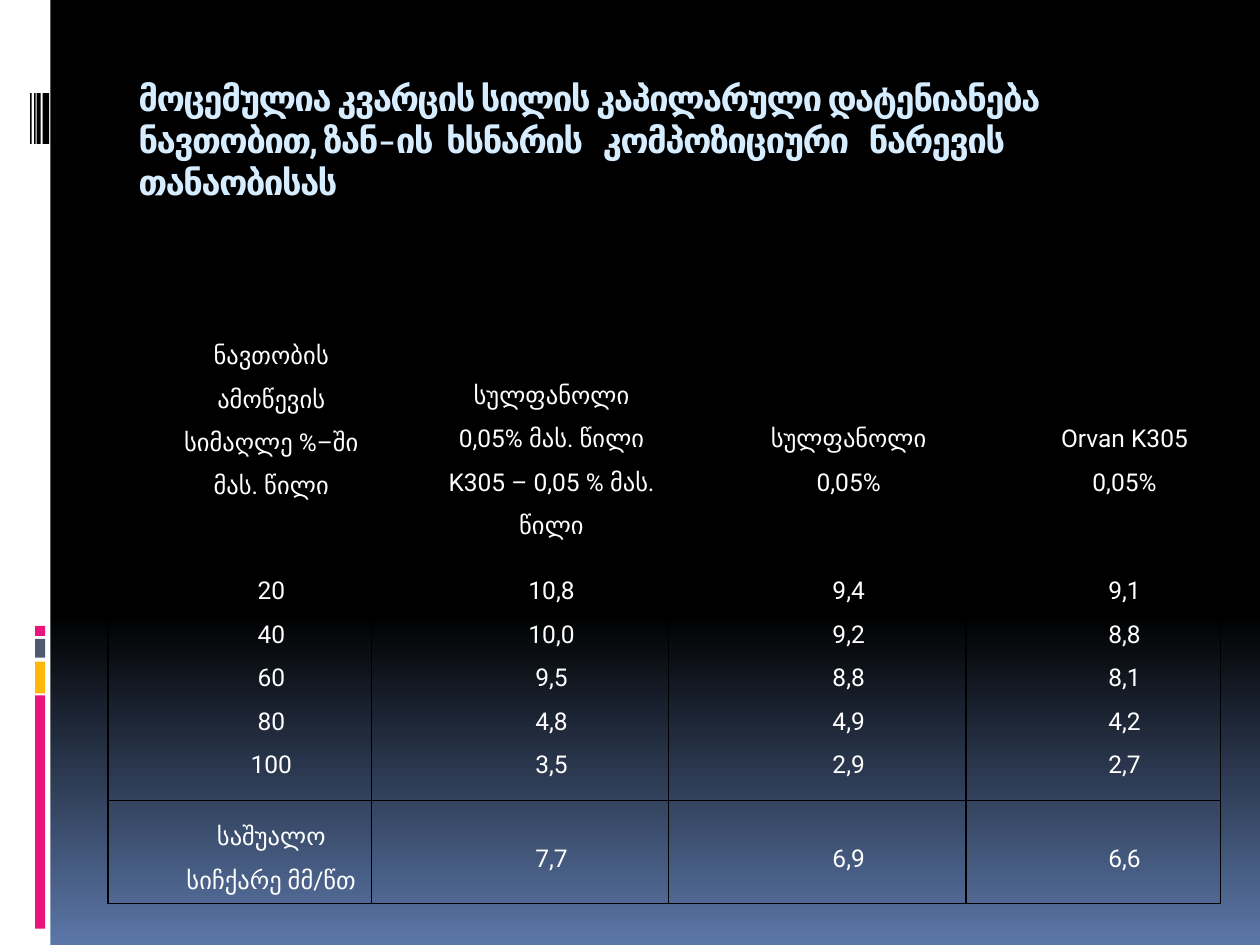
from pptx import Presentation
from pptx.dml.color import RGBColor
from pptx.enum.shapes import MSO_SHAPE as Shape
from pptx.enum.text import MSO_ANCHOR as Anchor, PP_ALIGN as Align
from pptx.oxml import parse_xml
from pptx.oxml.ns import nsdecls
from pptx.util import Cm, Pt

TITLE = ("მოცემულია კვარცის სილის კაპილარული დატენიანება ნავთობით, ზან", "–",
         "ის  ხსნარის   კომპოზიციური   ნარევის   თანაობისას")
HEADS = [
    ["სულფანოლი 0,05% მას. წილი K305 – 0,05 % მას. წილი"],
    ["სულფანოლი", "0,05%"],
    ["Orvan K305", "0,05%"],
]
SIDE = ["ნავთობის ამოწევის სიმაღლე %–ში მას. წილი"]
DATA = [
    ["20", "40", "60", "80", "100"],
    ["10,8", "10,0", "9,5", "4,8", "3,5"],
    ["9,4", "9,2", "8,8", "4,9", "2,9"],
    ["9,1", "8,8", "8,1", "4,2", "2,7"],
]
MEANS = [["საშუალო სიჩქარე მმ/წთ"], ["7,7"], ["6,9"], ["6,6"]]
ROWS = [[SIDE, [], [], []], [[], *HEADS], DATA, MEANS]
WIDTHS = [5.31, 5.99, 5.99, 5.13]
HEIGHTS = [1.6, 3.18, 5.21, 2.08]

# left, top, width, height, colour
BANDS = [(0, 0, 1.02, 19.05, "FFFFFF")]
BANDS += [(0.71, top, 0.2, high, tint) for top, high, tint in [
    (14.02, 4.7, "EA157A"), (13.34, 0.64, "FEB80A"),
    (12.88, 0.38, "4E5B6F"), (12.62, 0.2, "EA157A")]]
BANDS += [(left, 1.88, wide, 1.02, "000000") for left, wide in [
    (0.86, 0.13), (0.74, 0.08), (0.69, 0.03), (0.61, 0.03)]]


def rgb(code):
    return RGBColor.from_string(code)


def write(para, text, size=14, color="FFFFFF", font="Roboto", bold=False, gap=0):
    """Add a run; gap is the letter spacing in points."""
    run = para.add_run()
    run.text = text
    face = run.font
    face.size, face.name, face.bold = Pt(size), font, bold
    face.color.rgb = rgb(color)
    if gap:
        run._r.get_or_add_rPr().set("spc", str(gap * 100))


def paint(slide):
    fill = slide.background.fill
    fill.gradient()
    fill.gradient_angle = 270
    for stop, (pos, code) in zip(fill.gradient_stops, [(0.65, "000000"), (1, "5B77A8")]):
        stop.position = pos
        stop.color.rgb = rgb(code)


def band(slide, left, top, wide, high, code):
    bar = slide.shapes.add_shape(Shape.RECTANGLE, Cm(left), Cm(top), Cm(wide), Cm(high))
    bar.shadow.inherit = False
    bar.fill.solid()
    bar.fill.fore_color.rgb = rgb(code)
    bar.line.fill.background()


def edge(cell):
    """Draw the four borders of a cell; they must precede its fill."""
    props = cell._tc.get_or_add_tcPr()
    for spot, side in enumerate(("lnL", "lnR", "lnT", "lnB")):
        props.insert(spot, parse_xml(
            f'<a:{side} {nsdecls("a")} w="{Pt(1)}"><a:solidFill>'
            f'<a:srgbClr val="000000"/></a:solidFill></a:{side}>'))


def fill_cell(cell, lines):
    cell.fill.background()
    edge(cell)
    cell.vertical_anchor = Anchor.MIDDLE
    cell.margin_left = cell.margin_right = Cm(0.18)
    cell.margin_top = cell.margin_bottom = 0
    frame = cell.text_frame
    for num, line in enumerate(lines):
        para = frame.add_paragraph() if num else frame.paragraphs[0]
        para.alignment, para.line_spacing = Align.CENTER, 1.5
        para._p.get_or_add_pPr().set("marL", str(Cm(1.27)))
        write(para, line)


def add_grid(slide):
    grid = slide.shapes.add_table(len(ROWS), len(WIDTHS), Cm(2.18), Cm(5.77),
                                  Cm(sum(WIDTHS)), Cm(sum(HEIGHTS))).table
    grid.first_row = grid.horz_banding = False
    for col, wide in zip(grid.columns, WIDTHS):
        col.width = Cm(wide)
    for row, high, items in zip(grid.rows, HEIGHTS, ROWS):
        row.height = Cm(high)
        for cell, lines in zip(row.cells, items):
            fill_cell(cell, lines)
    grid.cell(0, 0).merge(grid.cell(1, 0))
    grid.cell(0, 1).merge(grid.cell(0, 3))


def add_title(slide):
    frame = slide.shapes.add_textbox(Cm(2.54), Cm(1.42), Cm(21.59), Cm(2.54)).text_frame
    frame.word_wrap = True
    for text, font in zip(TITLE, ("Roboto", "Calibri", "Roboto")):
        write(frame.paragraphs[0], text, size=20, color="D6ECFF", font=font, bold=True, gap=-1)


def main():
    deck = Presentation()
    deck.slide_width, deck.slide_height = Cm(25.4), Cm(19.05)
    slide = deck.slides.add_slide(deck.slide_layouts[6])
    paint(slide)
    for item in BANDS:
        band(slide, *item)
    add_title(slide)
    add_grid(slide)
    deck.save("out.pptx")


if __name__ == "__main__":
    main()
